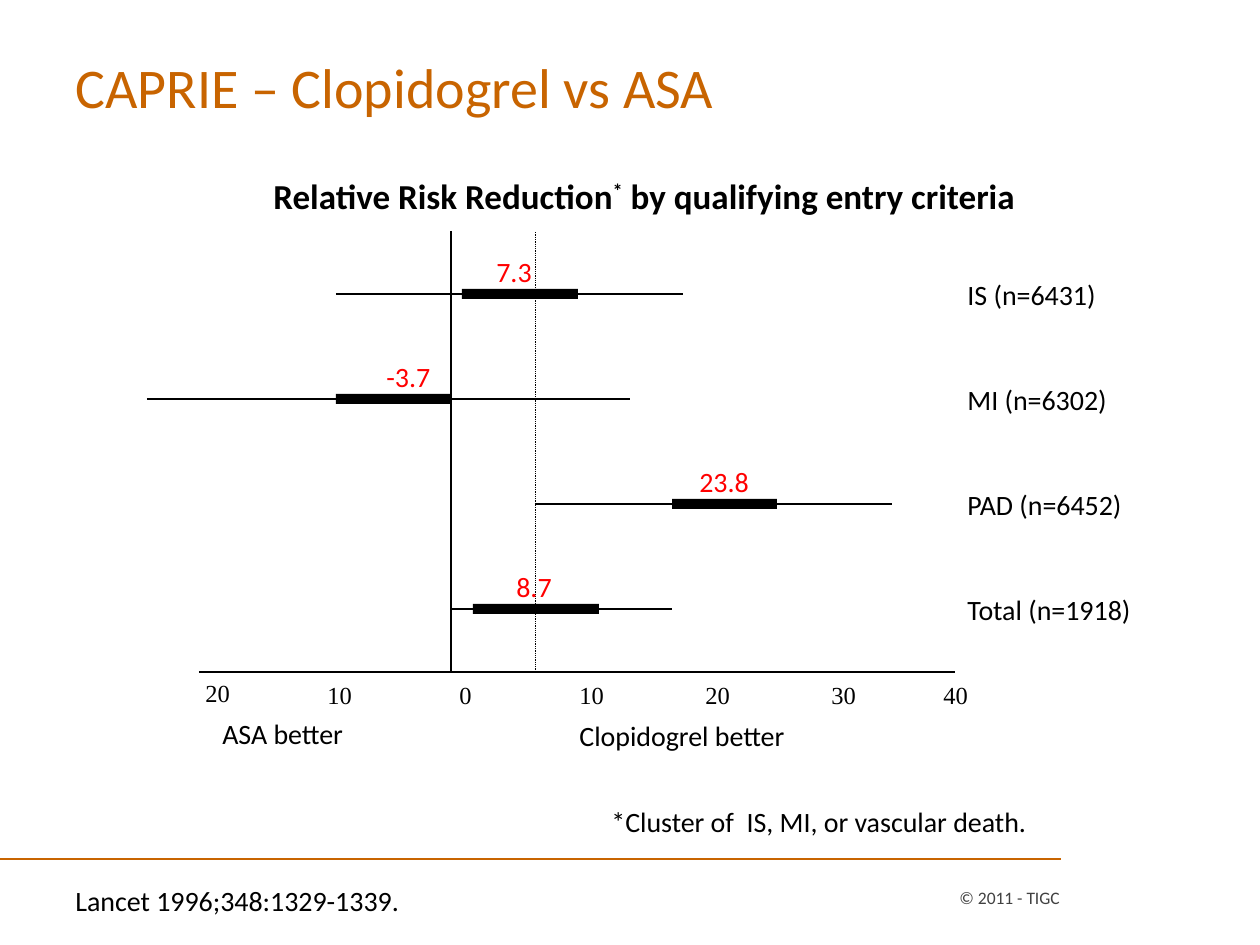
from lxml.etree import SubElement
from pptx import Presentation
from pptx.dml.color import RGBColor
from pptx.enum.dml import MSO_LINE
from pptx.enum.shapes import MSO_CONNECTOR, MSO_SHAPE
from pptx.enum.text import MSO_ANCHOR, PP_ALIGN
from pptx.oxml.ns import qn
from pptx.util import Pt

BLACK = RGBColor(0x00, 0x00, 0x00)
WHITE = RGBColor(0xFF, 0xFF, 0xFF)
ORANGE = RGBColor(0xC8, 0x64, 0x00)
RED = RGBColor(0xFF, 0x00, 0x00)
GRAY = RGBColor(0x41, 0x41, 0x41)

SCALE = 914400 / 126
ROW_TOP, ROW_STEP, BAR_HEIGHT = 294, 105, 10
AXIS_Y, ZERO_X, OVERALL_X = 672, 451, 535
LABEL_X = 955

STUDY_GROUPS = [
    ("IS (n=6431)", 155, (336, 683), (462, 116), "7.3", (484, 62)),
    ("MI (n=6302)", 171, (147, 630), (336, 116), "-3.7", (374, 69)),
    ("PAD (n=6452)", 181, (535, 892), (672, 105), "23.8", (687, 76)),
    ("Total (n=1918)", 197, (451, 672), (473, 126), "8.7", (504, 62)),
]
TICKS = [("20", 193, 672), ("10", 315, 674), ("0", 447, 674), ("10", 567, 674),
         ("20", 693, 674), ("30", 819, 674), ("40", 931, 674)]


def emu(*lengths):
    """Turn px lengths into EMU."""
    return [round(length * SCALE) for length in lengths]


def write(para, text, size=16, color=BLACK, font="Calibri", bold=False, raised=False):
    """Add a formatted span of text to a paragraph."""
    span = para.add_run()
    span.text = text
    span.font.size = Pt(size)
    span.font.name = font
    span.font.bold = bold
    span.font.color.rgb = color
    if raised:
        span.font._element.set("baseline", "30000")


class ForestPlotSlide:
    """Hold the current slide and draw each kind of element on it."""

    def __init__(self, page):
        """Keep the page to draw on."""
        self.page = page

    def title(self, text, left, top, width, height):
        """Fill and place the title placeholder."""
        box = self.page.shapes.title
        box.left, box.top, box.width, box.height = emu(left, top, width, height)
        box.text_frame.vertical_anchor = MSO_ANCHOR.MIDDLE
        para = box.text_frame.paragraphs[0]
        para.alignment = PP_ALIGN.LEFT
        write(para, text, size=32, color=ORANGE)

    def text(self, text, left, top, width, height=47, wrap=False,
             align=PP_ALIGN.LEFT, anchor=MSO_ANCHOR.TOP, **style):
        """Add a text box and return its paragraph."""
        box = self.page.shapes.add_textbox(*emu(left, top, width, height))
        box.text_frame.word_wrap = wrap
        box.text_frame.vertical_anchor = anchor
        para = box.text_frame.paragraphs[0]
        para.alignment = align
        write(para, text, **style)
        return para

    def rectangle(self, left, top, width, height, color):
        """Add a plain filled rectangle without outline."""
        box = self.page.shapes.add_shape(
            MSO_SHAPE.RECTANGLE, *emu(left, top, width, height))
        box.shadow.inherit = False
        box.fill.solid()
        box.fill.fore_color.rgb = color
        box.line.fill.background()
        return box

    def line(self, x1, y1, x2, y2, color=BLACK, width=1, dash=None):
        """Add a straight line."""
        line = self.page.shapes.add_connector(
            MSO_CONNECTOR.STRAIGHT, *emu(x1, y1, x2, y2))
        line.line.color.rgb = color
        line.line.width = Pt(width)
        if dash:
            line.line.dash_style = dash
        SubElement(line._element.spPr, qn("a:effectLst"))

    def study_group(self, y, label, label_width, interval, bar, value, value_span):
        """Draw one row: interval, bar, value and label."""
        self.line(interval[0], y, interval[1], y)
        self.rectangle(bar[0], y - BAR_HEIGHT // 2, bar[1], BAR_HEIGHT, BLACK)
        self.text(value, value_span[0], y - 46, value_span[1], color=RED)
        self.text(label, LABEL_X, y - 23, label_width)


def main():
    """Build the slide and save it."""
    deck = Presentation()
    deck.slide_width, deck.slide_height = emu(1260, 945)
    page = deck.slides.add_slide(deck.slide_layouts[5])
    plot = ForestPlotSlide(page)

    plot.line(1061, 859, 0, 859, color=ORANGE)
    plot.title("CAPRIE – Clopidogrel vs ASA", 63, 38, 1134, 97)

    source = plot.rectangle(63, 877, 431, 47, WHITE)
    source.text_frame.word_wrap = True
    source.text_frame.vertical_anchor = MSO_ANCHOR.TOP
    para = source.text_frame.paragraphs[0]
    para.alignment = PP_ALIGN.LEFT
    write(para, "Lancet 1996;348:1329-1339.")

    heading = plot.text("Relative Risk Reduction", 261, 183, 770, 38, size=20, bold=True)
    heading.line_spacing = 0.6
    write(heading, "*", size=20, bold=True, raised=True)
    write(heading, " by qualifying entry criteria", size=20, bold=True)

    plot.line(199, AXIS_Y, LABEL_X, AXIS_Y)
    plot.line(ZERO_X, 231, ZERO_X, AXIS_Y)
    plot.line(OVERALL_X, AXIS_Y, OVERALL_X, 231, width=0.5, dash=MSO_LINE.ROUND_DOT)
    for number, left, top in TICKS:
        plot.text(number, left, top, 38 if number == "0" else 50, 42,
                  size=14, font="Times New Roman")
    for row, group in enumerate(STUDY_GROUPS):
        plot.study_group(ROW_TOP + row * ROW_STEP, *group)

    plot.text("ASA better", 210, 710, 152)
    plot.text("Clopidogrel better", 567, 712, 234)
    plot.text("*Cluster of  IS, MI, or vascular death.", 599, 798, 446)
    plot.text("© 2011 - TIGC", 673, 873, 399, 50, wrap=True, align=PP_ALIGN.RIGHT,
              anchor=MSO_ANCHOR.MIDDLE, size=10, color=GRAY)
    deck.save("out.pptx")


if __name__ == "__main__":
    main()
